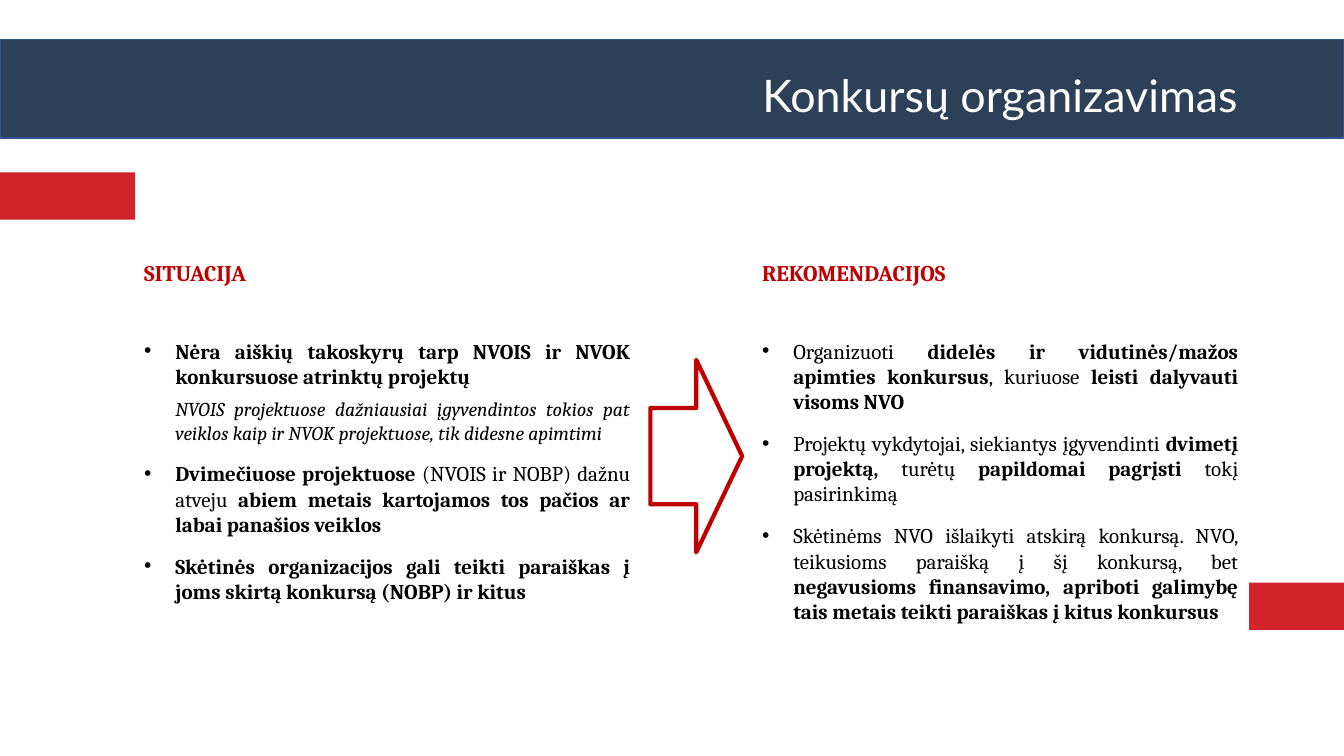
from dataclasses import dataclass
from typing import Optional

from lxml import etree
from pptx import Presentation
from pptx import util as u
from pptx.dml.color import RGBColor
from pptx.enum import shapes, text
from pptx.oxml import ns


@dataclass(frozen=True)
class Theme:
    navy: str = "2C4058"
    edge: str = "325491"
    red: str = "D2232A"
    dark: str = "C00000"
    black: str = "000000"
    white: str = "FFFFFF"
    sans: str = "Lato"
    serif: str = "Cambria"
    title: float = 32
    head: float = 16
    body: float = 15
    note: float = 14


@dataclass(frozen=True)
class Box:
    """Left, top, width and height in percent of the slide's size."""
    x: float
    y: float
    w: float
    h: float


@dataclass(frozen=True)
class Block:
    box: Box
    kind: shapes.MSO_SHAPE
    fill: Optional[str] = None
    line: Optional[str] = None
    width: float = 1


@dataclass(frozen=True)
class Item:
    """Words between asterisks are bold."""
    words: str
    note: bool = False


@dataclass(frozen=True)
class Column:
    box: Box
    head: str
    items: tuple[Item, ...]


THEME = Theme()
WIDE, HIGH = u.Inches(13.33), u.Inches(7.5)
INDENT = u.Inches(0.31)
RECT = shapes.MSO_SHAPE.RECTANGLE
TITLE = Box(26.7, 9.07, 66.17, 7.87)
BAND = Block(Box(0, 5.2, 100, 13.07), RECT, THEME.navy, THEME.edge)
BLOCKS = (
    Block(Box(48.39, 47.6, 6.83, 25.47), shapes.MSO_SHAPE.RIGHT_ARROW,
          line=THEME.dark, width=3),
    Block(Box(0, 22.8, 10.05, 6.27), RECT, THEME.red),
    Block(Box(92.95, 77.07, 7.05, 6.27), RECT, THEME.red),
)
COLUMNS = (
    Column(Box(9.98, 33.6, 37.66, 47.33), "SITUACIJA", (
        Item("*Nėra aiškių takoskyrų tarp NVOIS ir NVOK konkursuose "
             "atrinktų projektų*"),
        Item("NVOIS projektuose dažniausiai įgyvendintos tokios pat veiklos "
             "kaip ir NVOK projektuose, tik didesne apimtimi", note=True),
        Item("*Dvimečiuose projektuose *(NVOIS ir NOBP) dažnu atveju *abiem "
             "metais kartojamos tos pačios ar labai panašios veiklos*"),
        Item("*Skėtinės organizacijos gali teikti paraiškas į joms skirtą "
             "konkursą (NOBP) ir kitus*"),
    )),
    Column(Box(55.96, 33.6, 36.91, 54.8), "REKOMENDACIJOS", (
        Item("Organizuoti* didelės ir vidutinės/mažos apimties konkursus*, "
             "kuriuose *leisti dalyvauti visoms NVO*"),
        Item("Projektų vykdytojai, siekiantys įgyvendinti *dvimetį projektą, "
             "*turėtų *papildomai pagrįsti *tokį pasirinkimą"),
        Item("Skėtinėms NVO išlaikyti atskirą konkursą. NVO, teikusioms "
             "paraišką į šį konkursą, bet *negavusioms finansavimo, apriboti "
             "galimybę tais metais teikti paraiškas į kitus konkursus*"),
    )),
)


def place(box: Box) -> tuple[int, int, int, int]:
    return (int(WIDE * box.x / 100), int(HIGH * box.y / 100),
            int(WIDE * box.w / 100), int(HIGH * box.h / 100))


def style(font, name: str, size: float, color: str) -> None:
    font.name, font.size = name, u.Pt(size)
    font.color.rgb = RGBColor.from_string(color)


def draw_block(slide, block: Block):
    shape = slide.shapes.add_shape(block.kind, *place(block.box))
    shape.shadow.inherit = False
    if block.fill:
        shape.fill.solid()
        shape.fill.fore_color.rgb = RGBColor.from_string(block.fill)
    else:
        shape.fill.background()
    if block.line:
        shape.line.color.rgb = RGBColor.from_string(block.line)
        shape.line.width = u.Pt(block.width)
    else:
        shape.line.fill.background()
    return shape


def draw_title(slide, words: str) -> None:
    title = slide.shapes.title
    title.left, title.top, title.width, title.height = place(TITLE)
    title.fill.solid()
    title.fill.fore_color.rgb = RGBColor.from_string(THEME.navy)
    frame = title.text_frame
    frame.text = words
    frame.auto_size = text.MSO_AUTO_SIZE.NONE
    frame.vertical_anchor = text.MSO_ANCHOR.MIDDLE
    para = frame.paragraphs[0]
    para.alignment, para.line_spacing = text.PP_ALIGN.RIGHT, 0.9
    style(para.font, THEME.sans, THEME.title, THEME.white)


def add_item(frame, item: Item, gap: float) -> None:
    para = frame.add_paragraph()
    para.alignment, para.space_before = text.PP_ALIGN.JUSTIFY, u.Pt(gap)
    props = para._p.get_or_add_pPr()
    props.set("marL", str(INDENT))
    if not item.note:
        props.set("indent", str(-INDENT))
        etree.SubElement(props, ns.qn("a:buFont"), typeface="Arial")
        etree.SubElement(props, ns.qn("a:buChar"), char="•")
    size = THEME.note if item.note else THEME.body
    style(para.font, THEME.serif, size, THEME.black)
    para.font.italic = item.note
    for spot, part in enumerate(item.words.split("*")):
        if part:
            run = para.add_run()
            run.text, run.font.bold = part, spot % 2 == 1


def draw_column(slide, column: Column) -> None:
    frame = slide.shapes.add_textbox(*place(column.box)).text_frame
    frame.word_wrap = True
    head = frame.paragraphs[0]
    head.text, head.alignment = column.head, text.PP_ALIGN.JUSTIFY
    style(head.font, THEME.serif, THEME.head, THEME.dark)
    head.font.bold = True
    for spot, item in enumerate(column.items):
        # The first item stands well clear of the heading
        gap = 37.4 if spot == 0 else 6 if item.note else 12
        add_item(frame, item, gap)


def main() -> None:
    deck = Presentation()
    deck.slide_width, deck.slide_height = WIDE, HIGH
    slide = deck.slides.add_slide(deck.slide_layouts[5])

    # Title on its band, with the band sent to the back
    draw_title(slide, "Konkursų organizavimas")
    band = draw_block(slide, BAND)
    slide.shapes.title._element.addprevious(band._element)

    # Two columns of text
    for column in COLUMNS:
        draw_column(slide, column)

    # Arrow between the columns and red side tags
    for block in BLOCKS:
        draw_block(slide, block)

    deck.save("out.pptx")


if __name__ == "__main__":
    main()
